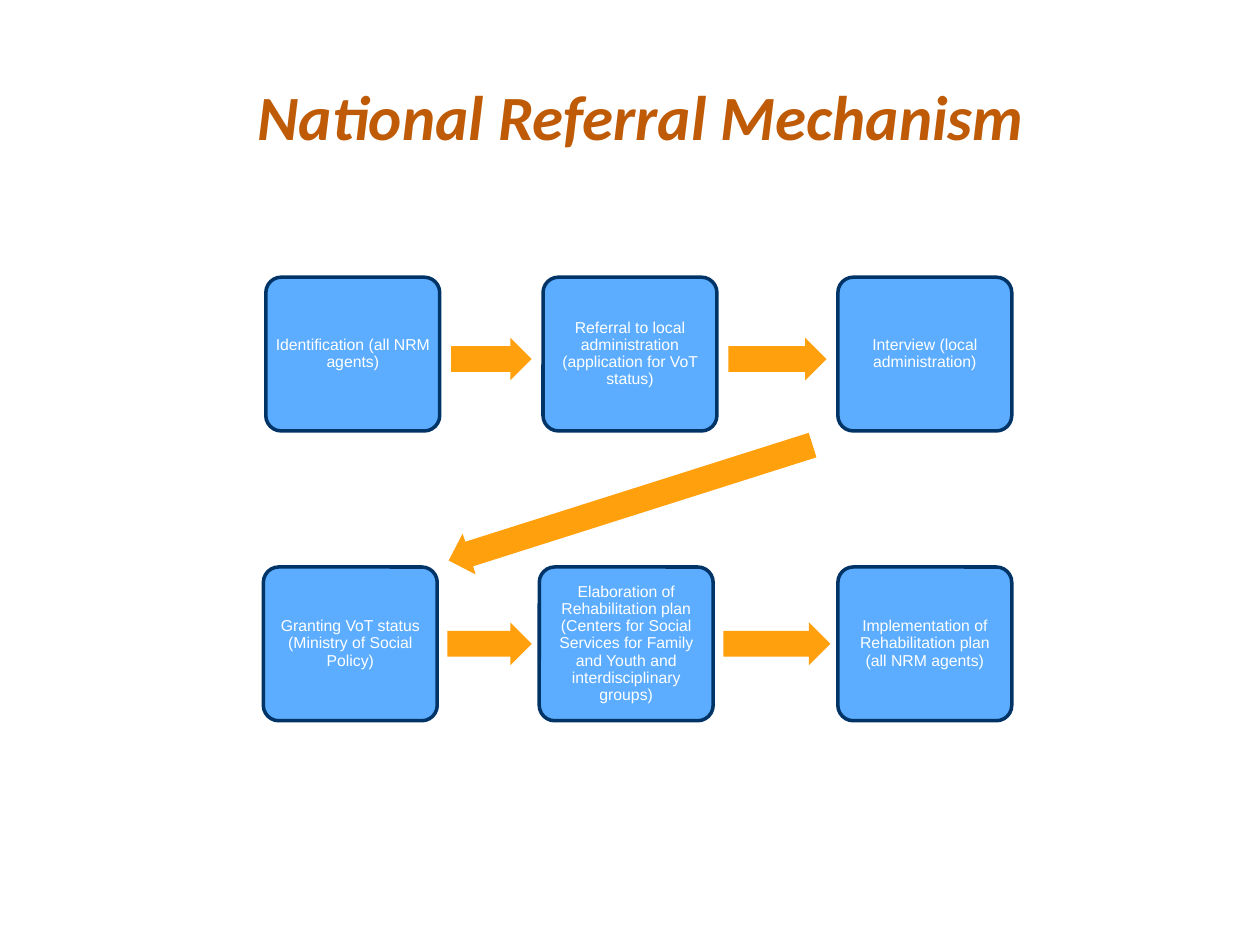
"""Build the National Referral Mechanism flow slide."""
from itertools import pairwise

from pptx import Presentation
from pptx.dml.color import RGBColor
from pptx.enum.shapes import MSO_SHAPE
from pptx.enum.text import MSO_ANCHOR, PP_ALIGN
from pptx.util import Inches, Pt

BOX, ARROW = MSO_SHAPE.ROUNDED_RECTANGLE, MSO_SHAPE.RIGHT_ARROW
MIDDLE, BOTTOM = MSO_ANCHOR.MIDDLE, MSO_ANCHOR.BOTTOM
CENTER = PP_ALIGN.CENTER

RUST = RGBColor(0xBF, 0x5B, 0x07)
BLUE = RGBColor(0x5C, 0xAD, 0xFF)
NAVY = RGBColor(0x00, 0x33, 0x66)
AMBER = RGBColor(0xFF, 0xA0, 0x0C)
WHITE = RGBColor(0xFF, 0xFF, 0xFF)

WIDTH, HEIGHT = Inches(10), Inches(7.5)
COL, ROW = WIDTH / 100, HEIGHT / 75
STEP_W, STEP_H, ARROW_H = 13.8, 12.2, 3.4

TITLE_FONT = {"name": "Calibri", "size": Pt(36), "bold": True, "italic": True}
STEP_FONT = {"name": "Arial", "size": Pt(9)}

ROWS = [
    {"top": 22, "lead": 0.9, "trail": 0.9, "drop": 0.4, "steps": [
        (21.1, "Identification (all NRM agents)"),
        (43.1, "Referral to local administration (application for VoT status)"),
        (66.5, "Interview (local administration)")]},
    {"top": 45, "lead": 0.8, "trail": 0.6, "drop": 0, "steps": [
        (20.9, "Granting VoT status (Ministry of Social Policy)"),
        (42.8, "Elaboration of Rehabilitation plan (Centers for Social Services "
               "for Family and Youth and interdisciplinary groups)"),
        (66.5, "Implementation of Rehabilitation plan (all NRM agents)")]},
]


def place(x, y, w, h):
    """Turn grid columns and rows into slide lengths."""
    return [round(v) for v in (x * COL, y * ROW, w * COL, h * ROW)]


def write(shape, text, font, color, anchor):
    """Write one centred paragraph in a shape."""
    frame = shape.text_frame
    frame.word_wrap = True
    frame.vertical_anchor = anchor
    para = frame.paragraphs[0]
    para.alignment = CENTER
    para.line_spacing = 0.9
    run = para.add_run()
    run.text = text
    for key, value in font.items():
        setattr(run.font, key, value)
    run.font.color.rgb = color


def add_title(slide, box):
    """Place the title at the foot of its box."""
    shape = slide.shapes.add_textbox(*place(*box))
    write(shape, "National Referral Mechanism", TITLE_FONT, RUST, BOTTOM)


def add_step(slide, box, text):
    """Draw one step of the flow."""
    shape = slide.shapes.add_shape(BOX, *place(*box))
    shape.shadow.inherit = False
    shape.adjustments[0] = 0.1
    shape.fill.solid()
    shape.fill.fore_color.rgb = BLUE
    shape.line.color.rgb = NAVY
    shape.line.width = Pt(2)
    for side in ("left", "top", "right", "bottom"):
        setattr(shape.text_frame, f"margin_{side}", Inches(0.04))
    write(shape, text, STEP_FONT, WHITE, MIDDLE)


def add_arrow(slide, box, turn=0):
    """Draw a block arrow, turned by some degrees."""
    shape = slide.shapes.add_shape(ARROW, *place(*box))
    shape.shadow.inherit = False
    shape.adjustments[0] = 0.6
    shape.adjustments[1] = 0.5
    shape.fill.solid()
    shape.fill.fore_color.rgb = AMBER
    shape.line.fill.background()
    shape.rotation = turn


def add_row(slide, top, lead, trail, drop, steps):
    """Draw a row of steps with an arrow in each gap."""
    for left, text in steps:
        add_step(slide, (left, top, STEP_W, STEP_H), text)
    mid = top + (STEP_H - ARROW_H) / 2 + drop
    for (left, _), (right, _) in pairwise(steps):
        start = left + STEP_W + lead
        add_arrow(slide, (start, mid, right - trail - start, ARROW_H))


def main():
    """Build and save the slide."""
    deck = Presentation()
    deck.slide_width, deck.slide_height = WIDTH, HEIGHT
    slide = deck.slides.add_slide(deck.slide_layouts[6])
    add_title(slide, (7.5, 0.2, 86.7, 12.5))
    for row in ROWS:
        add_row(slide, **row)
    add_arrow(slide, (34.9, 38.2, 30.3, ARROW_H), 162.4)
    deck.save("out.pptx")


if __name__ == "__main__":
    main()
